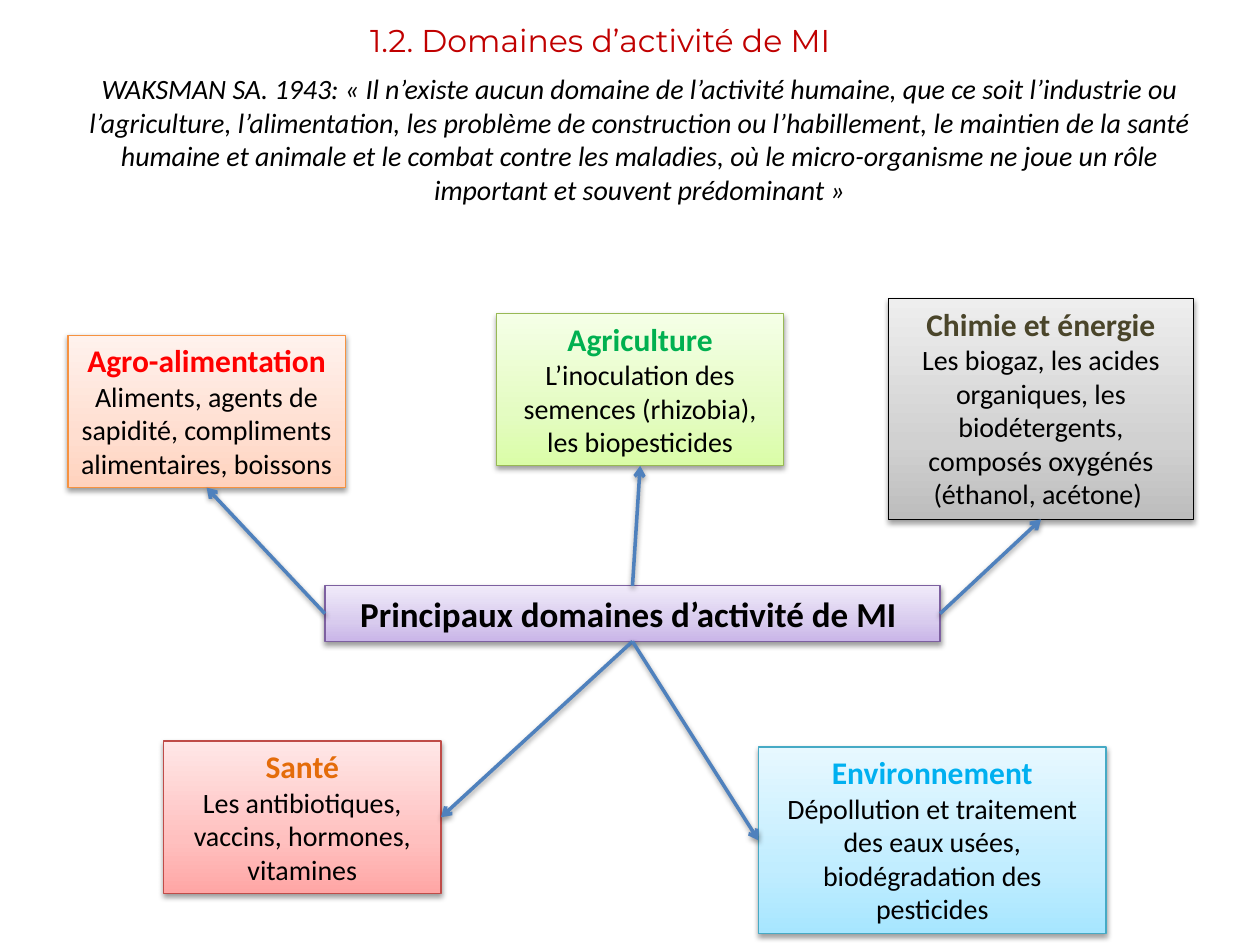
from lxml import etree
from pptx import Presentation
from pptx import util as u
from pptx.dml.color import RGBColor
from pptx.enum import shapes, text
from pptx.oxml import parse_xml
from pptx.oxml.ns import nsdecls, qn

COLORS = {"title": "C00000", "body": "000000", "arrow": "4F81BD"}
TOP, LEFT, BOTTOM, RIGHT = range(4)

TITLE = "1.2. Domaines d’activité de MI"
QUOTE = (
    "WAKSMAN SA. 1943: « Il n’existe aucun domaine de l’activité humaine, que ce soit "
    "l’industrie ou l’agriculture, l’alimentation, les problème de construction ou "
    "l’habillement, le maintien de la santé humaine et animale et le combat contre les "
    "maladies, où le micro-organisme ne joue un rôle important et souvent prédominant »"
)

HUB = {
    "at": (6.55, 11.81, 12.4, 1.12), "line": "7D60A0",
    "gradient": ("C9B5E8", "D8CBEE", "F0EAF9"),
    "heading": "Principaux domaines d’activité de MI ", "color": "000000",
}
DOMAINS = [
    {"at": (1.37, 6.76, 5.59, 3.07), "line": "F69240",
     "gradient": ("FFD2BD", "FFDED0", "FFF2ED"),
     "heading": "Agro-alimentation", "color": "FF0000",
     "body": "Aliments, agents de sapidité, compliments alimentaires, boissons",
     "sites": (LEFT, BOTTOM)},
    {"at": (10.01, 6.32, 5.79, 3.07), "line": "98B955",
     "gradient": ("DAFDA7", "E4FCC2", "F5FFE7"),
     "heading": "Agriculture", "color": "00B050",
     "body": "L’inoculation des semences (rhizobia), les biopesticides",
     "sites": (TOP, BOTTOM)},
    {"at": (17.91, 6.02, 6.15, 4.45), "line": "000000",
     "gradient": ("BDBDBD", "D1D1D1", "EEEEEE"),
     "heading": "Chimie et énergie", "color": "4A452A",
     "body": "Les biogaz, les acides organiques, les biodétergents, "
             "composés oxygénés (éthanol, acétone) ",
     "sites": (RIGHT, BOTTOM)},
    {"at": (3.3, 14.94, 5.59, 3.07), "line": "BF4C48",
     "gradient": ("FFA6A5", "FFC0BF", "FFE7E7"),
     "heading": "Santé", "color": "E46C0A",
     "body": "Les antibiotiques, vaccins, hormones, vitamines",
     "sites": (BOTTOM, RIGHT)},
    {"at": (15.29, 15.06, 7.01, 3.76), "line": "46AAC5",
     "gradient": ("A7E6FF", "C1EDFF", "E7F8FF"),
     "heading": "Environnement", "color": "00B0F0",
     "body": "Dépollution et traitement des eaux usées, biodégradation des pesticides",
     "sites": (BOTTOM, LEFT)},
]


def add_shadow(shape):
    shape._element.spPr.append(parse_xml(
        f'<a:effectLst {nsdecls("a")}><a:outerShdw blurRad="40000" dist="20000" '
        'dir="5400000" rotWithShape="0"><a:srgbClr val="000000">'
        '<a:alpha val="38000"/></a:srgbClr></a:outerShdw></a:effectLst>'))


def add_gradient(shape, colors):
    stops = "".join(
        f'<a:gs pos="{position}"><a:srgbClr val="{color}"/></a:gs>'
        for position, color in zip((0, 35000, 100000), colors))
    shape._element.spPr.append(parse_xml(
        f'<a:gradFill {nsdecls("a")} rotWithShape="1"><a:gsLst>{stops}</a:gsLst>'
        '<a:lin ang="16200000" scaled="1"/></a:gradFill>'))


def set_line(shape, color, width):
    shape.line.color.rgb = RGBColor.from_string(color)
    shape.line.width = u.Pt(width)


def add_run(paragraph, words, size, color, font="Calibri", bold=False, italic=False):
    run = paragraph.add_run()
    run.text = words
    run.font.name = font
    run.font.size = u.Pt(size)
    run.font.bold = bold
    run.font.italic = italic
    run.font.color.rgb = RGBColor.from_string(color)


def add_text_box(slide, at, wrap):
    frame = slide.shapes.add_textbox(*map(u.Cm, at)).text_frame
    frame.word_wrap = wrap
    frame.auto_size = text.MSO_AUTO_SIZE.SHAPE_TO_FIT_TEXT
    return frame.paragraphs[0]


def add_box(slide, box, heading_size):
    shape = slide.shapes.add_shape(shapes.MSO_SHAPE.RECTANGLE, *map(u.Cm, box["at"]))
    add_gradient(shape, box["gradient"])
    set_line(shape, box["line"], 0.75)
    add_shadow(shape)
    frame = shape.text_frame
    frame.word_wrap = True
    frame.auto_size = text.MSO_AUTO_SIZE.SHAPE_TO_FIT_TEXT
    frame.vertical_anchor = text.MSO_ANCHOR.TOP
    paragraph = frame.paragraphs[0]
    paragraph.alignment = text.PP_ALIGN.CENTER
    add_run(paragraph, box["heading"], heading_size, box["color"], bold=True)
    if "body" in box:
        paragraph = frame.add_paragraph()
        paragraph.alignment = text.PP_ALIGN.CENTER
        add_run(paragraph, box["body"], 16, COLORS["body"])
    return shape


def add_arrow(slide, start, end, sites):
    arrow = slide.shapes.add_connector(shapes.MSO_CONNECTOR.STRAIGHT, 0, 0, 0, 0)
    arrow.begin_connect(start, sites[0])
    arrow.end_connect(end, sites[1])
    set_line(arrow, COLORS["arrow"], 2)
    etree.SubElement(arrow.line._get_or_add_ln(), qn("a:tailEnd"), type="arrow")
    add_shadow(arrow)


def main():
    presentation = Presentation()
    presentation.slide_width, presentation.slide_height = u.Cm(25.4), u.Cm(19.05)
    slide = presentation.slides.add_slide(presentation.slide_layouts[6])

    title = add_text_box(slide, (7.21, 0.3, 11.1, 1.02), False)
    add_run(title, TITLE, 18, COLORS["title"], font="Montserrat")
    quote = add_text_box(slide, (1.3, 1.32, 23.19, 3), True)
    quote.alignment = text.PP_ALIGN.CENTER
    add_run(quote, QUOTE, 16, COLORS["body"], italic=True)

    hub = add_box(slide, HUB, 20)
    domain_shapes = [add_box(slide, domain, 18) for domain in DOMAINS]
    for domain, shape in zip(DOMAINS, domain_shapes):
        add_arrow(slide, hub, shape, domain["sites"])

    presentation.save("out.pptx")


if __name__ == "__main__":
    main()
